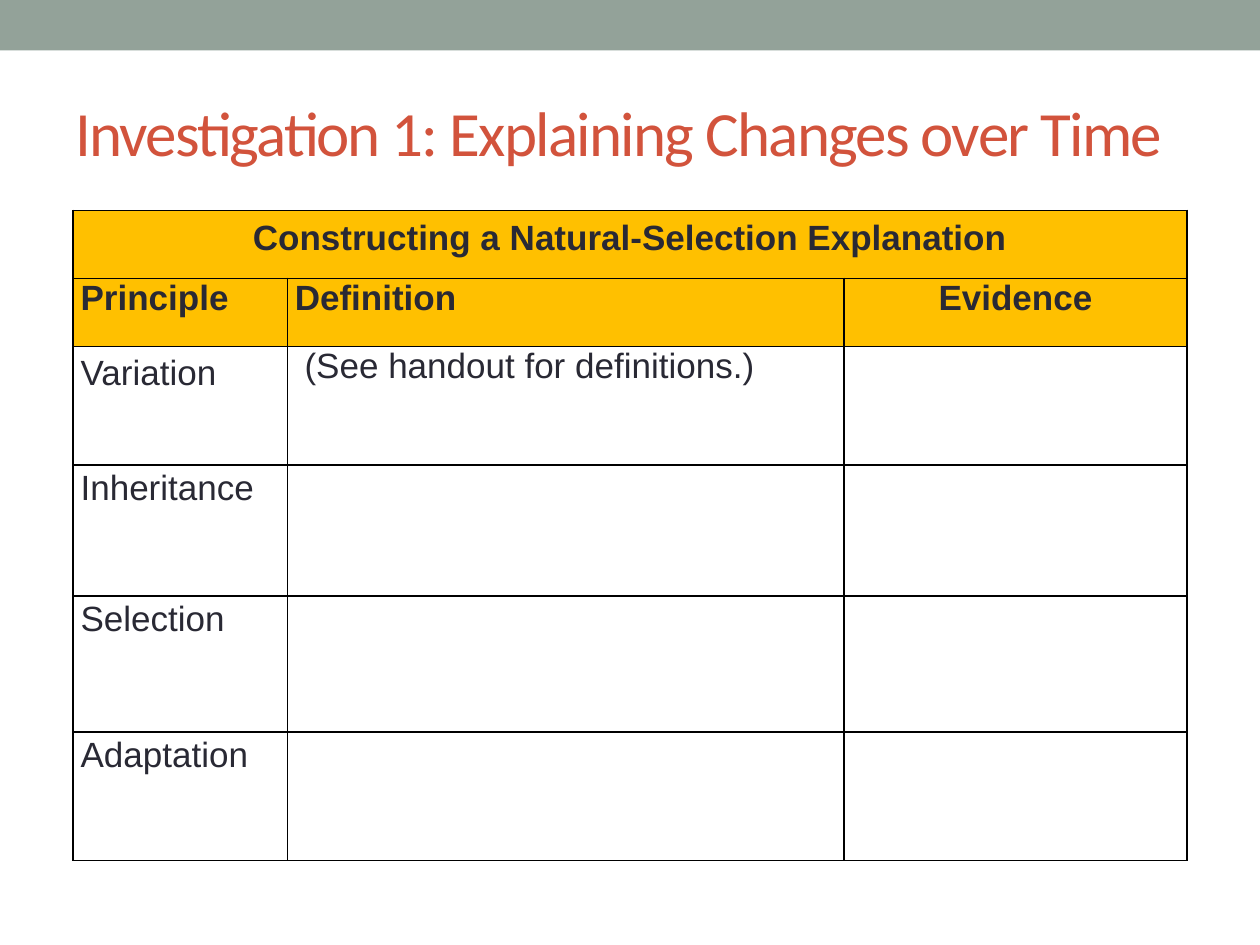
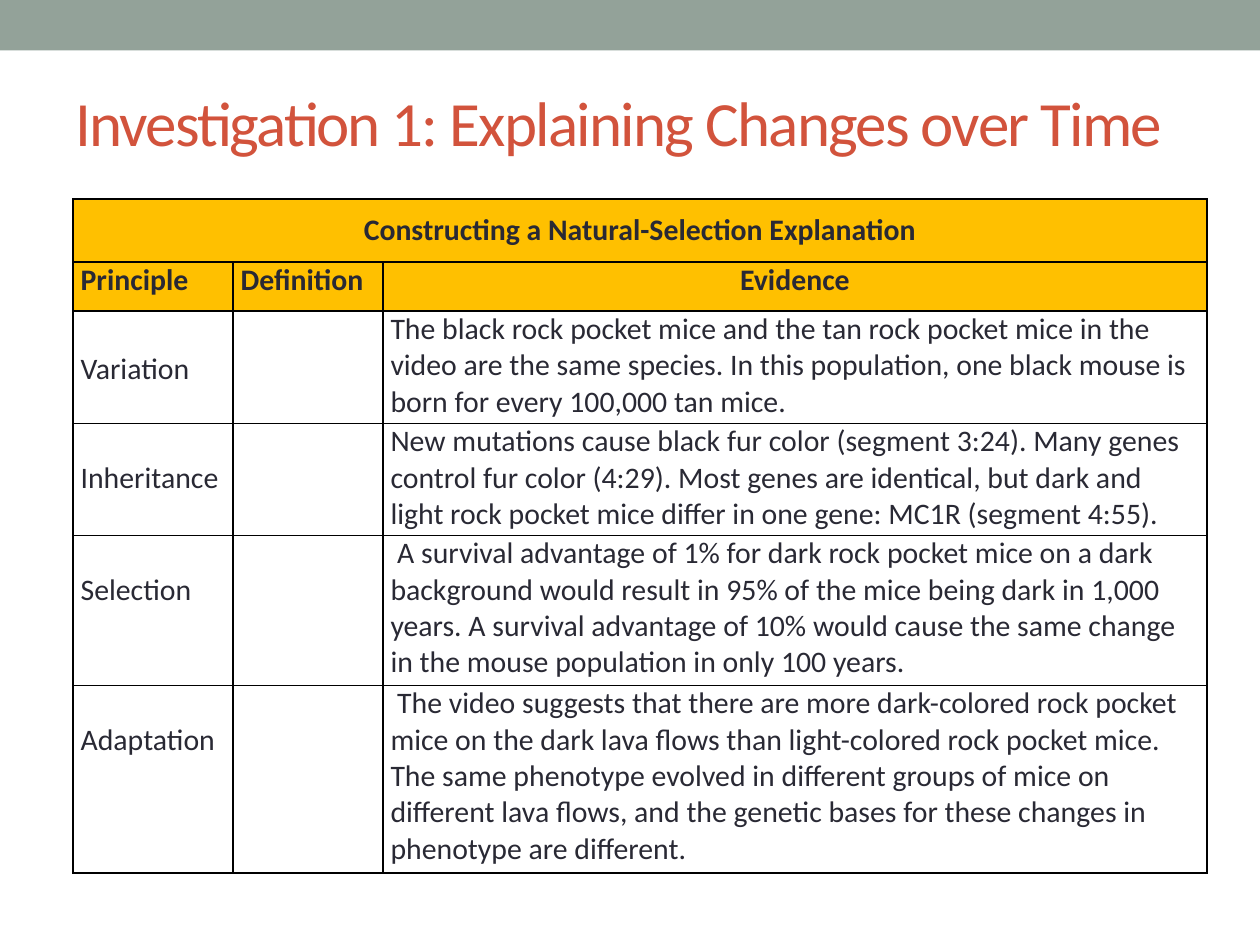
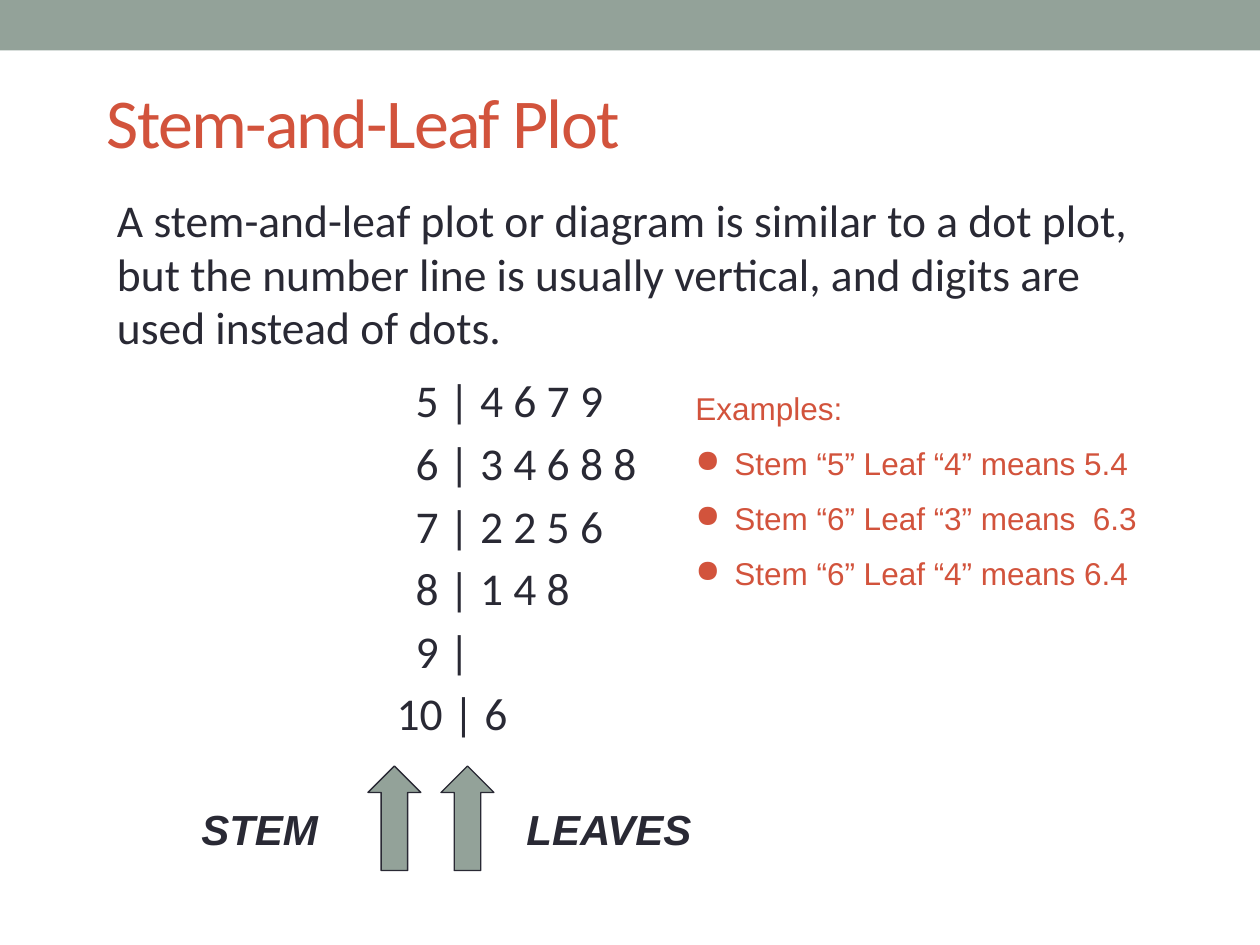
import pptx
import pptx.util
import pptx.dml.color
import pptx.enum.shapes
import pptx.enum.text
import pptx.oxml
import pptx.oxml.ns
import lxml.etree

Inches = pptx.util.Inches
Pt = pptx.util.Pt
RGBColor = pptx.dml.color.RGBColor
SHAPE = pptx.enum.shapes.MSO_SHAPE
ALIGN = pptx.enum.text.PP_ALIGN
ANCHOR = pptx.enum.text.MSO_ANCHOR
qn = pptx.oxml.ns.qn

# Shared look
SAGE = RGBColor(0x93, 0xA2, 0x99)
RUST = RGBColor(0xD2, 0x53, 0x3C)
INK = RGBColor(0x29, 0x29, 0x34)
GOLD = RGBColor(0xFF, 0xC0, 0x00)
WHITE = RGBColor(0xFF, 0xFF, 0xFF)
BLACK = RGBColor(0x00, 0x00, 0x00)
HEAD = "Calibri"
BODY = "Arial"

INVESTIGATION = "Investigation 1: Explaining Changes over Time"
CAPTION = "Constructing a Natural-Selection Explanation"
COLUMNS = ["Principle", "Definition", "Evidence"]
PRINCIPLES = ["Variation", "Inheritance", "Selection", "Adaptation"]
EVIDENCE = [
    "The black rock pocket mice and the tan rock pocket mice in the video are "
    "the same species. In this population, one black mouse is born for every "
    "100,000 tan mice.",
    "New mutations cause black fur color (segment 3:24). Many genes control "
    "fur color (4:29). Most genes are identical, but dark and light rock "
    "pocket mice differ in one gene: MC1R (segment 4:55).",
    " A survival advantage of 1% for dark rock pocket mice on a dark "
    "background would result in 95% of the mice being dark in 1,000 years. "
    "A survival advantage of 10% would cause the same change in the mouse "
    "population in only 100 years.",
    " The video suggests that there are more dark-colored rock pocket mice on "
    "the dark lava flows than light-colored rock pocket mice. The same "
    "phenotype evolved in different groups of mice on different lava flows, "
    "and the genetic bases for these changes in phenotype are different.",
]
PLOT = [("5", "4 6 7 9"), ("6", "3 4 6 8 8"), ("7", "2 2 5 6"),
        ("8", "1 4 8"), ("9", ""), ("10", "6")]
EXAMPLES = ["Stem “5” Leaf “4” means 5.4",
            "Stem “6” Leaf “3” means  6.3",
            "Stem “6” Leaf “4” means 6.4"]


def add_run(p, text, size, font, color=INK, bold=False, italic=False):
    r = p.add_run()
    r.text = text
    r.font.size = Pt(size)
    r.font.name = font
    r.font.color.rgb = color
    r.font.bold = bold
    r.font.italic = italic
    return r


def add_text_box(s, left, top, width, height):
    tf = s.shapes.add_textbox(Inches(left), Inches(top),
                              Inches(width), Inches(height)).text_frame
    tf.word_wrap = True
    return tf


def add_filled_shape(s, kind, left, top, width, height, line=None):
    sp = s.shapes.add_shape(kind, Inches(left), Inches(top),
                            Inches(width), Inches(height))
    sp.shadow.inherit = False
    sp.fill.solid()
    sp.fill.fore_color.rgb = SAGE
    if line is None:
        sp.line.fill.background()
    else:
        sp.line.color.rgb = line
        sp.line.width = Pt(0.75)


def add_titled_slide(prs, title, left, top, width, size):
    s = prs.slides.add_slide(prs.slide_layouts[6])
    add_filled_shape(s, SHAPE.RECTANGLE, 0, 0, 10, 0.4)
    tf = add_text_box(s, left, top, width, 1.08)
    tf.vertical_anchor = ANCHOR.MIDDLE
    r = add_run(tf.paragraphs[0], title, size, HEAD, RUST)
    r.font._element.set("spc", "-100")
    return s


def set_indent(p, left, first=0.0):
    pPr = p._p.get_or_add_pPr()
    pPr.set("marL", str(Inches(left)))
    pPr.set("indent", str(Inches(first)))
    return pPr


def add_bullet(p, char):
    pPr = set_indent(p, 0.31, -0.31)
    lxml.etree.SubElement(pPr, qn("a:buChar")).set("char", char)


def border_cell(cell):
    tcPr = cell._tc.get_or_add_tcPr()
    for i, side in enumerate(("lnL", "lnR", "lnT", "lnB")):
        ln = pptx.oxml.parse_xml(
            f'<a:{side} {pptx.oxml.ns.nsdecls("a")} w="{Pt(1)}"><a:solidFill>'
            f'<a:srgbClr val="{BLACK}"/></a:solidFill></a:{side}>')
        tcPr.insert(i, ln)


def add_principle_table(s, top, widths, heights, rows, size, font, drops):
    """Caption row, heading row and body; drops lower the first text of each row."""
    grid = [[CAPTION, "", ""], COLUMNS] + rows
    table = s.shapes.add_table(len(grid), 3, Inches(0.58), Inches(top),
                               Inches(sum(widths)), Inches(sum(heights))).table
    for column, width in zip(table.columns, widths):
        column.width = Inches(width)
    for row, height in zip(table.rows, heights):
        row.height = Inches(height)
    table.cell(0, 0).merge(table.cell(0, 2))
    for i, texts in enumerate(grid):
        heading = i < 2
        for j, text in enumerate(texts):
            cell = table.cell(i, j)
            cell.fill.solid()
            cell.fill.fore_color.rgb = GOLD if heading else WHITE
            border_cell(cell)
            cell.margin_left = cell.margin_right = Inches(0.06)
            cell.margin_top = Inches(drops[i] if j == 0 else 0)
            cell.margin_bottom = 0
            if text:
                p = cell.text_frame.paragraphs[0]
                if text in (CAPTION, "Evidence"):
                    p.alignment = ALIGN.CENTER
                add_run(p, text, size, font, bold=heading)


def add_stem_plot(s):
    tf = add_text_box(s, 0.83, 1.5, 8.42, 4.5)
    p = tf.paragraphs[0]
    p.line_spacing = 0.98
    p.space_after = Pt(6)
    add_run(p, "A stem-and-leaf plot or diagram is similar to a dot plot, but "
            "the number line is usually vertical, and digits are used instead "
            "of dots.", 26, HEAD)
    for stem, leaves in PLOT:
        p = tf.add_paragraph()
        p.line_spacing = 0.98
        p.space_before = Pt(5.2)
        set_indent(p, 2.37 - 0.15 * (len(stem) - 1))
        add_run(p, f"{stem} | {leaves}".rstrip(), 26, HEAD)


def add_examples(s):
    tf = add_text_box(s, 5.42, 3.04, 4.25, 2.68)
    add_run(tf.paragraphs[0], "Examples:", 18, BODY, RUST)
    for example in EXAMPLES:
        p = tf.add_paragraph()
        p.space_before = Pt(9.8)
        add_bullet(p, "●")
        add_run(p, example, 18, BODY, RUST)


def add_plot_labels(s):
    for label, left, width in (("STEM", 1.5, 1.17), ("LEAVES", 4.08, 1.58)):
        tf = add_text_box(s, left, 6.33, width, 0.5)
        add_run(tf.paragraphs[0], label, 24, BODY, bold=True, italic=True)
    for left in (2.92, 3.5):
        add_filled_shape(s, SHAPE.UP_ARROW, left, 6.08, 0.42, 0.83, INK)


def main():
    prs = pptx.Presentation()
    prs.slide_width = Inches(10)
    prs.slide_height = Inches(7.5)

    # Empty explanation table
    s = add_titled_slide(prs, INVESTIGATION, 0.5, 0.5, 9, 36)
    rows = [[name, "", ""] for name in PRINCIPLES]
    rows[0][1] = " (See handout for definitions.)"
    add_principle_table(s, 1.67, [1.7, 4.42, 2.72],
                        [0.54, 0.54, 0.94, 1.04, 1.08, 1.02], rows, 20, BODY,
                        [0.07, 0, 0.06, 0.03, 0.03, 0.03])

    # Table with the evidence filled in
    s = add_titled_slide(prs, INVESTIGATION, 0.5, 0.42, 9, 36)
    rows = [[name, "", proof] for name, proof in zip(PRINCIPLES, EVIDENCE)]
    add_principle_table(s, 1.58, [1.27, 1.19, 6.54],
                        [0.5, 0.39, 0.89, 0.89, 1.19, 1.49], rows, 17, HEAD,
                        [0.1, 0, 0.32, 0.29, 0.29, 0.29])

    # Stem-and-leaf plot
    s = add_titled_slide(prs, "Stem-and-Leaf Plot", 0.75, 0.42, 8.75, 40)
    add_stem_plot(s)
    add_plot_labels(s)
    add_examples(s)

    prs.save("out.pptx")


if __name__ == "__main__":
    main()
